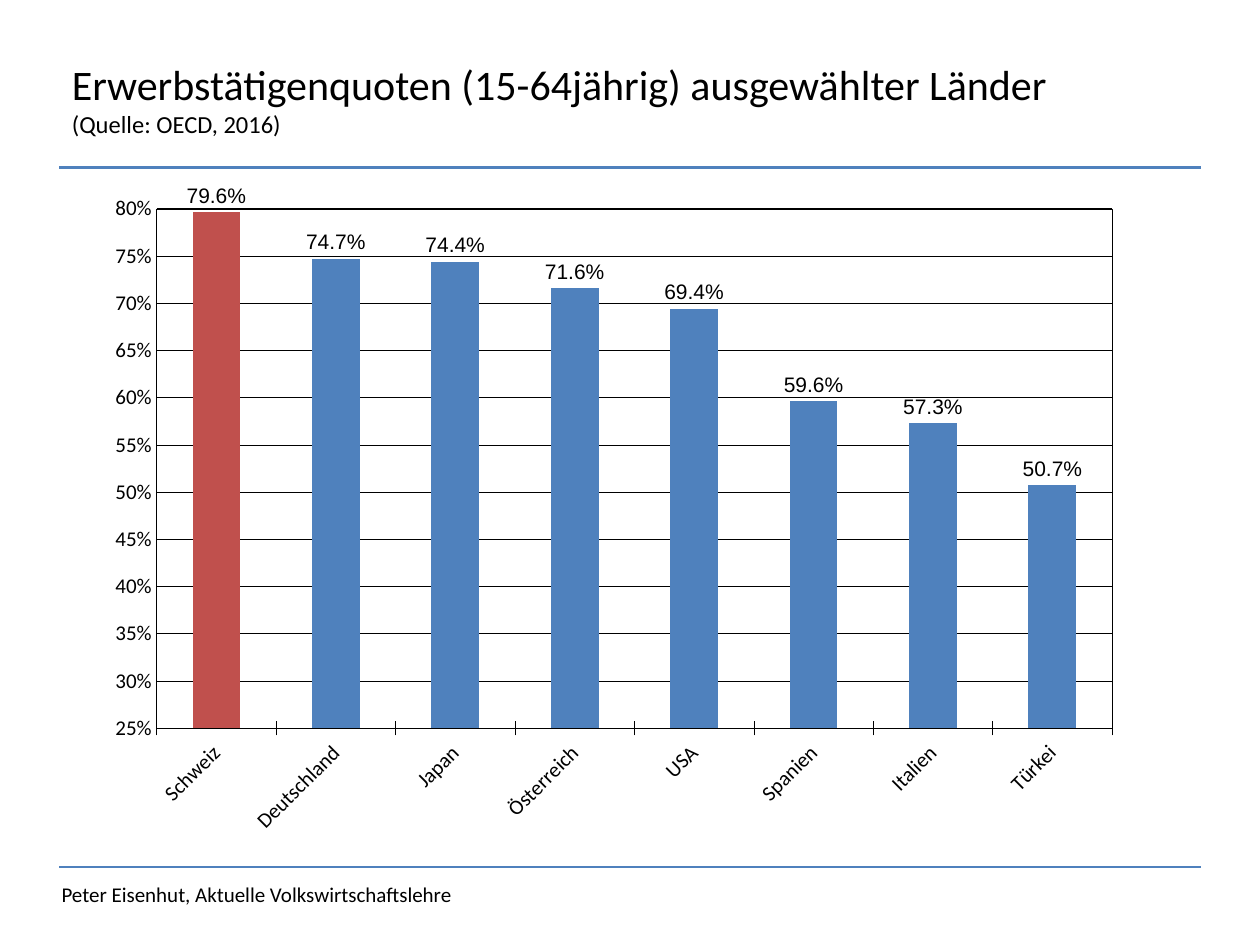
from pptx import Presentation
from pptx.chart.data import CategoryChartData as ChartData
from pptx.dml.color import RGBColor as Rgb
from pptx.enum.chart import XL_CHART_TYPE as Kind, XL_LABEL_POSITION as Place, XL_TICK_MARK as Tick
from pptx.enum.text import MSO_ANCHOR as Anchor, PP_ALIGN as Align
from pptx.oxml import parse_xml
from pptx.oxml.ns import nsdecls, qn
from pptx.util import Inches, Pt

HUES = {"blue": "4F81BD", "red": "C0504D", "black": "000000"}
RATES = {
    "Schweiz": 0.796, "Deutschland": 0.747, "Japan": 0.744, "Österreich": 0.716,
    "USA": 0.694, "Spanien": 0.596, "Italien": 0.573, "Türkei": 0.507,
}
PLOT = {"x": 0.081, "y": 0.047, "w": 0.837, "h": 0.727}


def hue(name):
    return Rgb.from_string(HUES[name])


def style(font, size=12, face="Calibri", color="black"):
    font.size = Pt(size)
    font.name = face
    font.bold = False
    font.color.rgb = hue(color)


def write(para, text, **form):
    run = para.add_run()
    run.text = text
    style(run.font, **form)


def move(shape, x, y, w, h):
    shape.left, shape.top = Inches(x), Inches(y)
    shape.width, shape.height = Inches(w), Inches(h)


def stroke(line, color="black", width=0.25):
    line.color.rgb = hue(color)
    line.width = Pt(width)


def add_title(slide, head, source):
    title = slide.shapes.title
    move(title, 0.47, 0.16, 9.18, 1.25)
    title.text_frame.vertical_anchor = Anchor.MIDDLE
    para = title.text_frame.paragraphs[0]
    para.alignment = Align.LEFT
    write(para, head, size=24)
    para.add_line_break()
    write(para, source, size=14)


def add_rule(slide, y):
    rule = slide.shapes.add_connector(1, Inches(0.47), Inches(y), Inches(9.53), Inches(y))
    stroke(rule.line, "blue", 1.25)
    rule._element.spPr.append(parse_xml(f"<a:effectLst {nsdecls('a')}/>"))


def add_footer(slide, text):
    box = slide.shapes.add_textbox(Inches(0.39), Inches(6.95), Inches(6.02), Inches(0.3))
    box.text_frame.word_wrap = True
    write(box.text_frame.paragraphs[0], text)


def frame_plot(chart):
    area = chart._chartSpace.chart.plotArea
    for old in area.findall(qn("c:layout")):
        area.remove(old)
    modes = "".join(f'<c:{key}Mode val="edge"/>' for key in "xy")
    sizes = "".join(f'<c:{key} val="{val}"/>' for key, val in PLOT.items())
    area.insert(0, parse_xml(
        f'<c:layout {nsdecls("c")}><c:manualLayout><c:layoutTarget val="inner"/>'
        f"{modes}{sizes}</c:manualLayout></c:layout>"))
    area.append(parse_xml(
        f'<c:spPr {nsdecls("c", "a")}><a:noFill/><a:ln w="{Pt(0.25)}"><a:solidFill>'
        f'<a:srgbClr val="{HUES["black"]}"/></a:solidFill></a:ln></c:spPr>'))


def style_axes(chart):
    cat, val = chart.category_axis, chart.value_axis
    for axis, tick in ((cat, Tick.CROSS), (val, Tick.INSIDE)):
        style(axis.tick_labels.font)
        stroke(axis.format.line)
        axis.major_tick_mark = tick
        axis.minor_tick_mark = Tick.NONE
    turn = cat._element.find(qn("c:txPr")).find(qn("a:bodyPr"))
    turn.set("rot", str(-45 * 60000))
    turn.set("vert", "horz")
    val.minimum_scale, val.maximum_scale, val.major_unit = 0.25, 0.8, 0.05
    val.tick_labels.number_format = "0%"
    val.tick_labels.number_format_is_linked = False
    val.has_major_gridlines = True
    stroke(val.major_gridlines.format.line)


def add_bars(slide):
    data = ChartData(number_format="0.0%")
    data.categories = list(RATES)
    data.add_series("Series 1", list(RATES.values()))
    chart = slide.shapes.add_chart(
        Kind.COLUMN_CLUSTERED, Inches(0.51), Inches(1.39), Inches(9.06), Inches(5.67), data).chart
    chart.has_legend = chart.has_title = False
    style(chart.font, face="Arial")
    plot = chart.plots[0]
    plot.vary_by_categories = False
    plot.gap_width = 150
    bars = plot.series[0]
    for part, color in ((bars, "blue"), (bars.points[0], "red")):
        part.format.fill.solid()
        part.format.fill.fore_color.rgb = hue(color)
    tags = bars.data_labels
    style(tags.font, face="Arial")
    tags.show_value = True
    tags.number_format = "0.0%"
    tags.number_format_is_linked = False
    tags.position = Place.OUTSIDE_END
    style_axes(chart)
    frame_plot(chart)


def main():
    deck = Presentation()
    deck.slide_width, deck.slide_height = Inches(10), Inches(7.5)
    slide = deck.slides.add_slide(deck.slide_layouts[5])
    for y in (1.33, 6.88):
        add_rule(slide, y)
    add_footer(slide, "Peter Eisenhut, Aktuelle Volkswirtschaftslehre")
    add_title(slide, "Erwerbstätigenquoten (15-64jährig) ausgewählter Länder", "(Quelle: OECD, 2016)")
    add_bars(slide)
    deck.save("out.pptx")


if __name__ == "__main__":
    main()
